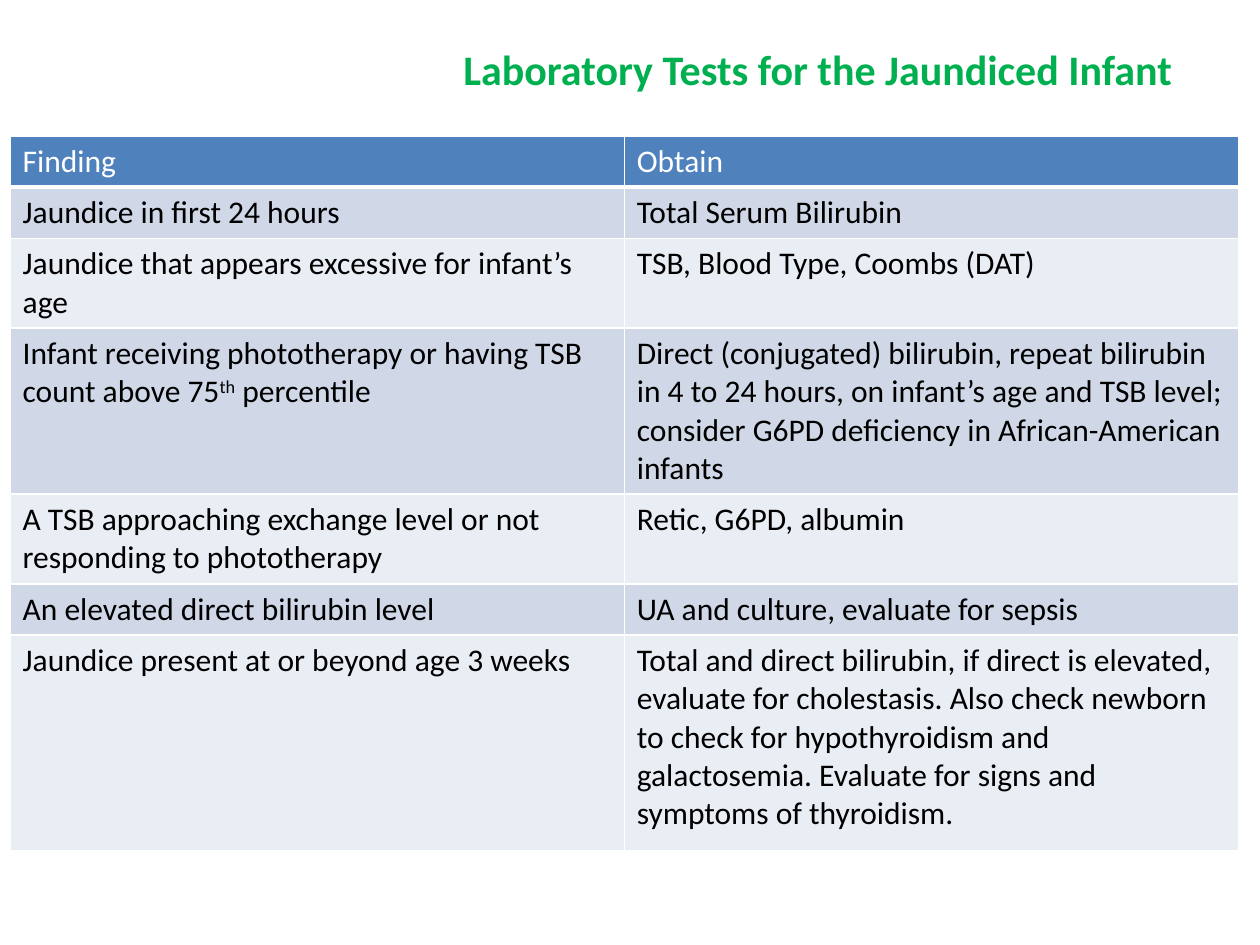
from lxml.etree import SubElement
from pptx import Presentation
from pptx.dml.color import RGBColor
from pptx.enum.text import MSO_ANCHOR
from pptx.oxml.ns import qn
from pptx.util import Inches, Pt

# Content: a cell is a string, or a list of (text, is superscript) pairs
TITLE = "Laboratory Tests for the Jaundiced Infant"
ROWS = [
    ("Finding", "Obtain"),
    ("Jaundice in first 24 hours", "Total Serum Bilirubin"),
    ("Jaundice that appears excessive for infant’s age", "TSB, Blood Type, Coombs (DAT)"),
    ([("Infant receiving phototherapy or having TSB count above 75", False),
      ("th", True), (" percentile", False)],
     "Direct (conjugated) bilirubin, repeat bilirubin in 4 to 24 hours, on infant’s age "
     "and TSB level; consider G6PD deficiency in African-American infants"),
    ("A TSB approaching exchange level or not responding to phototherapy",
     "Retic, G6PD, albumin"),
    ("An elevated direct bilirubin level", "UA and culture, evaluate for sepsis"),
    ("Jaundice present at or beyond age 3 weeks",
     "Total and direct bilirubin, if direct is elevated, evaluate for cholestasis. Also "
     "check newborn to check for hypothyroidism and galactosemia. Evaluate for signs and "
     "symptoms of thyroidism."),
]
ROW_HEIGHTS = [0.38, 0.38, 0.67, 1.24, 0.67, 0.38, 1.71]
COLUMN_WIDTH = 4.875

COLORS = {
    "title": "00B050", "header": "4F81BD", "header text": "FFFFFF", "text": "000000",
    "odd": "D0D8E8", "even": "E9EDF4", "border": "FFFFFF",
}
TITLE_FORMAT = {"name": "Calibri", "size": Pt(24), "bold": True}
CELL_FORMAT = {"name": "Calibri", "size": Pt(18), "bold": False}


def add_span(para, text, color, font_format, superscript=False):
    span = para.add_run()
    span.text = text
    for name, value in font_format.items():
        setattr(span.font, name, value)
    span.font.color.rgb = RGBColor.from_string(COLORS[color])
    if superscript:
        span.font._element.set("baseline", "30000")


def add_borders(cell, bottom_width):
    properties = cell._tc.get_or_add_tcPr()
    for side, width in (("L", 1), ("R", 1), ("T", 1), ("B", bottom_width)):
        line = SubElement(properties, qn(f"a:ln{side}"), w=str(Pt(width)))
        SubElement(SubElement(line, qn("a:solidFill")), qn("a:srgbClr"), val=COLORS["border"])


deck = Presentation()
deck.slide_width, deck.slide_height = Inches(10), Inches(7.5)
page = deck.slides.add_slide(deck.slide_layouts[6])

# Table of findings and tests
table = page.shapes.add_table(
    len(ROWS), 2, Inches(0.08), Inches(1.08),
    Inches(2 * COLUMN_WIDTH), Inches(sum(ROW_HEIGHTS))).table
for column in table.columns:
    column.width = Inches(COLUMN_WIDTH)

for r, (contents, height) in enumerate(zip(ROWS, ROW_HEIGHTS)):
    table.rows[r].height = Inches(height)
    is_header = r == 0
    fill = "header" if is_header else "odd" if r % 2 else "even"
    for c, content in enumerate(contents):
        cell = table.cell(r, c)
        add_borders(cell, 3 if is_header else 1)
        cell.fill.solid()
        cell.fill.fore_color.rgb = RGBColor.from_string(COLORS[fill])
        pieces = [(content, False)] if isinstance(content, str) else content
        for text, superscript in pieces:
            add_span(cell.text_frame.paragraphs[0], text,
                     "header text" if is_header else "text", CELL_FORMAT, superscript)

# Title
box = page.shapes.add_textbox(Inches(3.58), Inches(0.17), Inches(6.08), Inches(0.75))
box.text_frame.word_wrap = True
box.text_frame.vertical_anchor = MSO_ANCHOR.MIDDLE
add_span(box.text_frame.paragraphs[0], TITLE, "title", TITLE_FORMAT)

deck.save("out.pptx")
